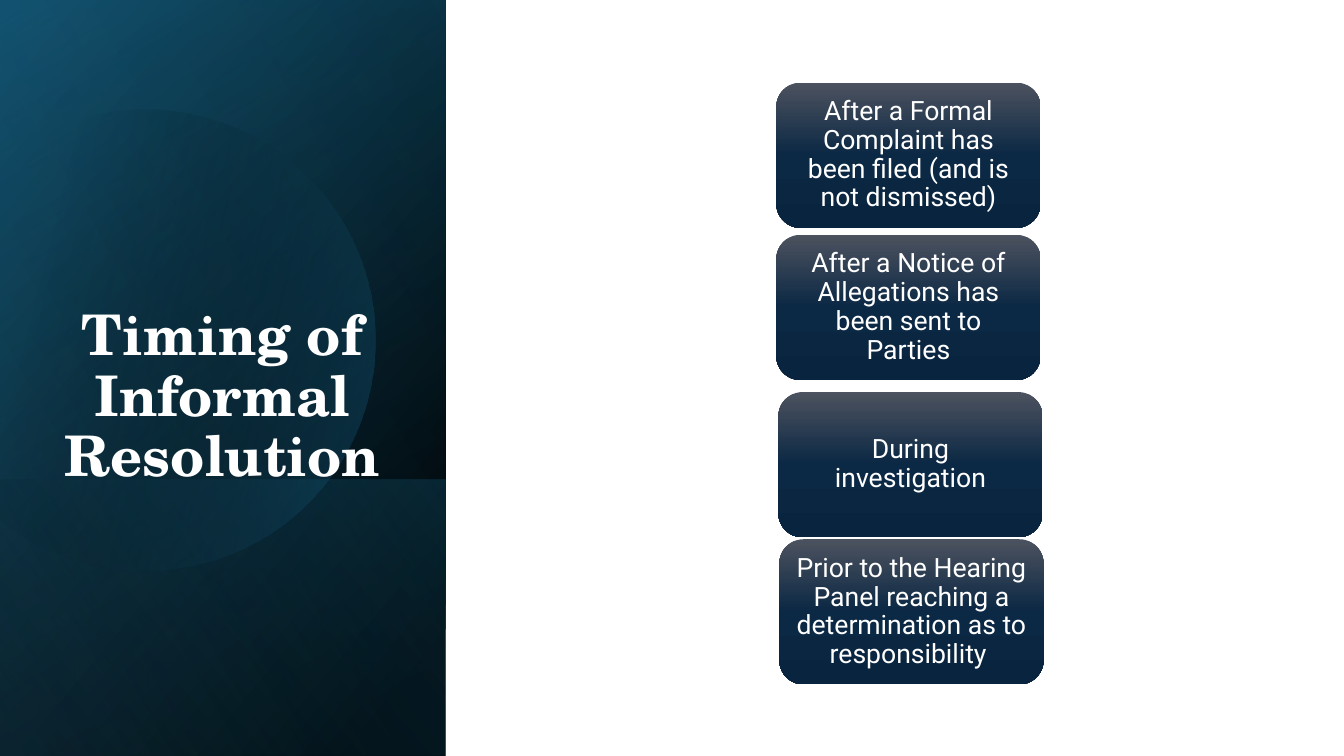
import pptx
import pptx.dml.color
import pptx.enum.shapes
import pptx.enum.text
import pptx.oxml
import pptx.oxml.ns
import pptx.util
from pptx.util import Inches

THEME = {
    "black": "000000", "teal": "156082", "deep_teal": "104862", "sky": "46B1E1",
    "white": "FFFFFF",
    "card": [(0, "4C525F", 100), (50, "0B2844", 100), (100, "08243E", 100)],
    "title_font": "TeX Gyre Schola", "body_font": "Roboto",
    "title_size": 40, "card_size": 19,
}


def style_gradient(sp, stops, angle):
    sp.shadow.inherit = False
    sp.line.fill.background()
    sp.fill.gradient()
    qn = pptx.oxml.ns.qn
    grad = sp._element.spPr.find(qn("a:gradFill"))
    gs_xml = "".join(
        f'<a:gs pos="{pos * 1000}"><a:srgbClr val="{color}">'
        f'<a:alpha val="{opacity * 1000}"/></a:srgbClr></a:gs>'
        for pos, color, opacity in stops)
    gs_list = pptx.oxml.parse_xml(
        f'<a:gsLst {pptx.oxml.ns.nsdecls("a")}>{gs_xml}</a:gsLst>')
    grad.replace(grad.find(qn("a:gsLst")), gs_list)
    lin = grad.find(qn("a:lin"))
    lin.set("ang", str(angle * 60000))
    lin.set("scaled", "0")


def add_text(tf, text, font, size, bold=False):
    tf.word_wrap = True
    p = tf.paragraphs[0]
    p.alignment = pptx.enum.text.PP_ALIGN.CENTER
    p.line_spacing = 0.9
    r = p.add_run()
    r.text = text
    r.font.name = font
    r.font.size = pptx.util.Pt(size)
    r.font.bold = bold
    r.font.color.rgb = pptx.dml.color.RGBColor.from_string(THEME["white"])
    return p


prs = pptx.Presentation()
prs.slide_width = Inches(13.33)
prs.slide_height = Inches(7.5)
s = prs.slides.add_slide(prs.slide_layouts[6])
shape_type = pptx.enum.shapes.MSO_SHAPE

black, teal = THEME["black"], THEME["teal"]
full_panel = (-1.54, 1.54, 7.5, 4.42)
lower_panel = (0.84, 3.92, 2.74, 4.42)
disc = (-0.85, 1.09, 4.57, 4.57)
layers = [
    (full_panel, [(8, black, 100), (100, THEME["deep_teal"], 100)], 50),
    (full_panel, [(0, black, 0), (99, teal, 46)], 30),
    (lower_panel, [(2, teal, 29), (100, black, 30)], 130),
    (disc, [(29, black, 0), (100, teal, 43)], 14),
    (full_panel, [(0, black, 0), (99, THEME["sky"], 11)], 120),
]
for box, stops, angle in layers:
    kind = shape_type.CHORD if box == disc else shape_type.RECTANGLE
    sp = s.shapes.add_shape(kind, *map(Inches, box))
    if box == disc:
        for i, degrees in enumerate((226, 134)):
            sp.adjustments[i] = degrees * 0.6
    else:
        sp.rotation = 90
        sp._element.spPr.xfrm.set("flipH", "1")
    style_gradient(sp, stops, angle)

title = s.shapes.add_textbox(Inches(0.5), Inches(2.71), Inches(3.41), Inches(2.19))
title.text_frame.vertical_anchor = pptx.enum.text.MSO_ANCHOR.BOTTOM
add_text(title.text_frame, "Timing of Informal Resolution",
         THEME["title_font"], THEME["title_size"], True)

cards = [
    (7.7, 0.82, "After a Formal Complaint has been filed (and is not dismissed)"),
    (7.7, 2.33, "After a Notice of Allegations has been sent to Parties"),
    (7.72, 3.89, "During investigation"),
    (7.73, 5.35, "Prior to the Hearing Panel reaching a determination as to responsibility "),
]
for left, top, text in cards:
    sp = s.shapes.add_shape(shape_type.ROUNDED_RECTANGLE, Inches(left), Inches(top),
                            Inches(2.62), Inches(1.44))
    style_gradient(sp, THEME["card"], 90)
    tf = sp.text_frame
    tf.margin_left = tf.margin_right = Inches(0.08)
    tf.margin_top = tf.margin_bottom = Inches(0.04)
    tf.vertical_anchor = pptx.enum.text.MSO_ANCHOR.MIDDLE
    p = add_text(tf, text, THEME["body_font"], THEME["card_size"])
    p.space_after = pptx.util.Pt(6.65)

prs.save("out.pptx")
